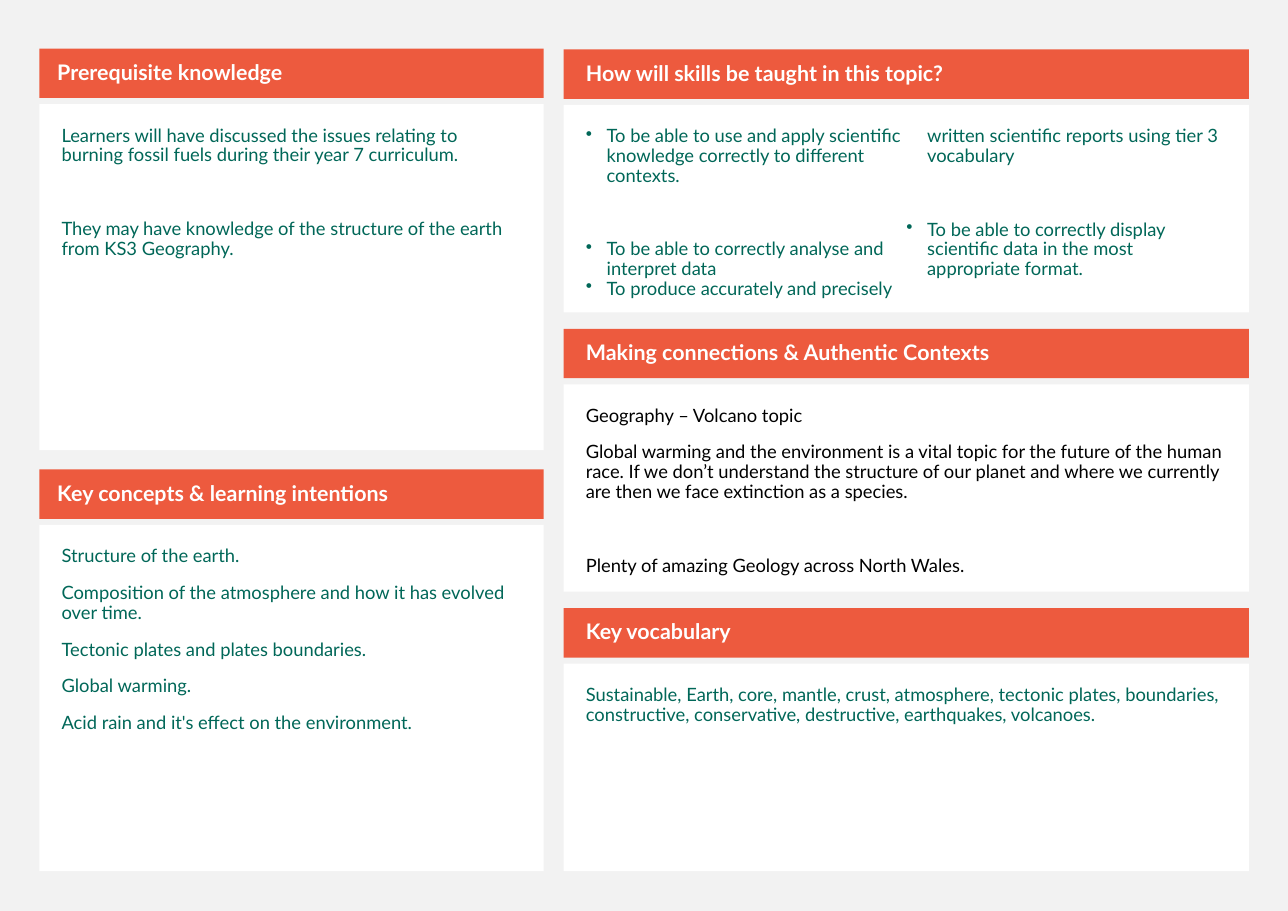
from pptx import Presentation
from pptx.dml.color import RGBColor
from pptx.enum.shapes import MSO_SHAPE
from pptx.enum.text import MSO_ANCHOR, MSO_AUTO_SIZE, PP_ALIGN
from pptx.oxml.xmlchemy import OxmlElement
from pptx.util import Cm, Pt

RECTANGLE = MSO_SHAPE.RECTANGLE
TOP, MIDDLE = MSO_ANCHOR.TOP, MSO_ANCHOR.MIDDLE
LEFT = PP_ALIGN.LEFT
FIXED_SIZE = MSO_AUTO_SIZE.NONE

GREY = RGBColor(0xF2, 0xF2, 0xF2)
WHITE = RGBColor(0xFF, 0xFF, 0xFF)
ORANGE = RGBColor(0xED, 0x5A, 0x3E)
GREEN = RGBColor(0x00, 0x67, 0x58)
BLACK = RGBColor(0x00, 0x00, 0x00)

# Space before a paragraph, in points
NONE, NORMAL, WIDE = 0, 11, 35

HEADER_HEIGHT = 1.14
BODY_OFFSET = 1.28
BODY_INSET = 0.51
BULLET_INDENT = 0.48

# Columns of sections: geometry in centimetres, then
# (title, text colour, bulleted, [(space before, text), ...])
LEFT_COLUMN = dict(left=0.91, top=1.12, width=11.63, pitch=9.7, body_height=7.98, title_inset=0.41)
LEFT_SECTIONS = [
    ("Prerequisite knowledge", GREEN, False, [
        (NONE, "Learners will have discussed the issues relating to burning fossil fuels "
               "during their year 7 curriculum."),
        (WIDE, "They may have knowledge of the structure of the earth from KS3 Geography."),
    ]),
    ("Key concepts & learning intentions", GREEN, False, [
        (NONE, "Structure of the earth."),
        (NORMAL, "Composition of the atmosphere and how it has evolved over time."),
        (NORMAL, "Tectonic plates and plates boundaries."),
        (NORMAL, "Global warming."),
        (NORMAL, "Acid rain and it's effect on the environment."),
    ]),
]
RIGHT_COLUMN = dict(left=13, top=1.14, width=15.8, pitch=6.44, body_height=4.78, title_inset=0.51)
RIGHT_SECTIONS = [
    ("How will skills be taught in this topic?", GREEN, True, [
        (NONE, "To be able to use and apply scientific knowledge correctly to different contexts."),
        (WIDE, "To be able to correctly analyse and interpret data"),
        (NONE, "To produce accurately and precisely written scientific reports "
               "using tier 3 vocabulary"),
        (WIDE, "To be able to correctly display scientific data in the most appropriate format."),
    ]),
    ("Making connections & Authentic Contexts", BLACK, False, [
        (NONE, "Geography – Volcano topic"),
        (NORMAL, "Global warming and the environment is a vital topic for the future of the "
                 "human race. If we don’t understand the structure of our planet and where "
                 "we currently are then we face extinction as a species."),
        (WIDE, "Plenty of amazing Geology across North Wales."),
    ]),
    ("Key vocabulary", GREEN, False, [
        (NONE, "Sustainable, Earth, core, mantle, crust, atmosphere, tectonic plates, "
               "boundaries, constructive, conservative, destructive, earthquakes, volcanoes."),
    ]),
]


class TopicSlide:
    """Holds the text style and the slide being built."""

    font_name = "Lato"
    title_size = Pt(14)
    body_size = Pt(12)
    line_spacing = 0.9

    def __init__(self, slide):
        """Take the slide and paint its background."""
        self.slide = slide
        slide.background.fill.solid()
        slide.background.fill.fore_color.rgb = GREY

    def panel(self, left, top, width, height, color, anchor, insets):
        """Add a plain rectangle and return it; insets run left, top, right, bottom."""
        shape = self.slide.shapes.add_shape(RECTANGLE, Cm(left), Cm(top), Cm(width), Cm(height))
        shape.shadow.inherit = False
        shape.fill.solid()
        shape.fill.fore_color.rgb = color
        shape.line.fill.background()
        frame = shape.text_frame
        frame.word_wrap = True
        frame.auto_size = FIXED_SIZE
        frame.vertical_anchor = anchor
        (frame.margin_left, frame.margin_top,
         frame.margin_right, frame.margin_bottom) = (Cm(inset) for inset in insets)
        return shape

    def text(self, paragraph, content, size, color, bold=False, space_before=NONE):
        """Put one styled run into a paragraph."""
        paragraph.alignment = LEFT
        paragraph.line_spacing = self.line_spacing
        paragraph.space_before = Pt(space_before)
        run = paragraph.add_run()
        run.text = content
        run.font.name = self.font_name
        run.font.size = size
        run.font.bold = bold
        run.font.color.rgb = color

    def bullet(self, paragraph):
        """Give a paragraph a round bullet with a hanging indent."""
        properties = paragraph._p.get_or_add_pPr()
        properties.set("marL", str(Cm(BULLET_INDENT)))
        properties.set("indent", str(-Cm(BULLET_INDENT)))
        character = OxmlElement("a:buChar")
        character.set("char", "•")
        properties.append(character)

    def header(self, left, top, width, title, title_inset):
        """Add the coloured bar with a section title."""
        shape = self.panel(left, top, width, HEADER_HEIGHT, ORANGE, MIDDLE,
                           (title_inset, 0.13, 0.25, 0.13))
        self.text(shape.text_frame.paragraphs[0], title, self.title_size, WHITE, bold=True)

    def body(self, left, top, width, height, color, bulleted, entries):
        """Add the white panel with section text; bullets flow in two columns."""
        shape = self.panel(left, top, width, height, WHITE, TOP, (BODY_INSET,) * 4)
        frame = shape.text_frame
        if bulleted:
            frame._txBody.bodyPr.set("numCol", "2")
        for index, (space_before, content) in enumerate(entries):
            paragraph = frame.add_paragraph() if index else frame.paragraphs[0]
            self.text(paragraph, content, self.body_size, color, space_before=space_before)
            if bulleted:
                self.bullet(paragraph)

    def column(self, sections, left, top, width, pitch, body_height, title_inset):
        """Stack sections of equal height from the top down."""
        for index, (title, color, bulleted, entries) in enumerate(sections):
            section_top = top + index * pitch
            self.header(left, section_top, width, title, title_inset)
            self.body(left, section_top + BODY_OFFSET, width, body_height,
                      color, bulleted, entries)


def main():
    """Build the topic overview and save it."""
    presentation = Presentation()
    presentation.slide_width = Cm(29.7)
    presentation.slide_height = Cm(21)
    topic = TopicSlide(presentation.slides.add_slide(presentation.slide_layouts[6]))
    topic.column(LEFT_SECTIONS, **LEFT_COLUMN)
    topic.column(RIGHT_SECTIONS, **RIGHT_COLUMN)
    presentation.save("out.pptx")


main()
